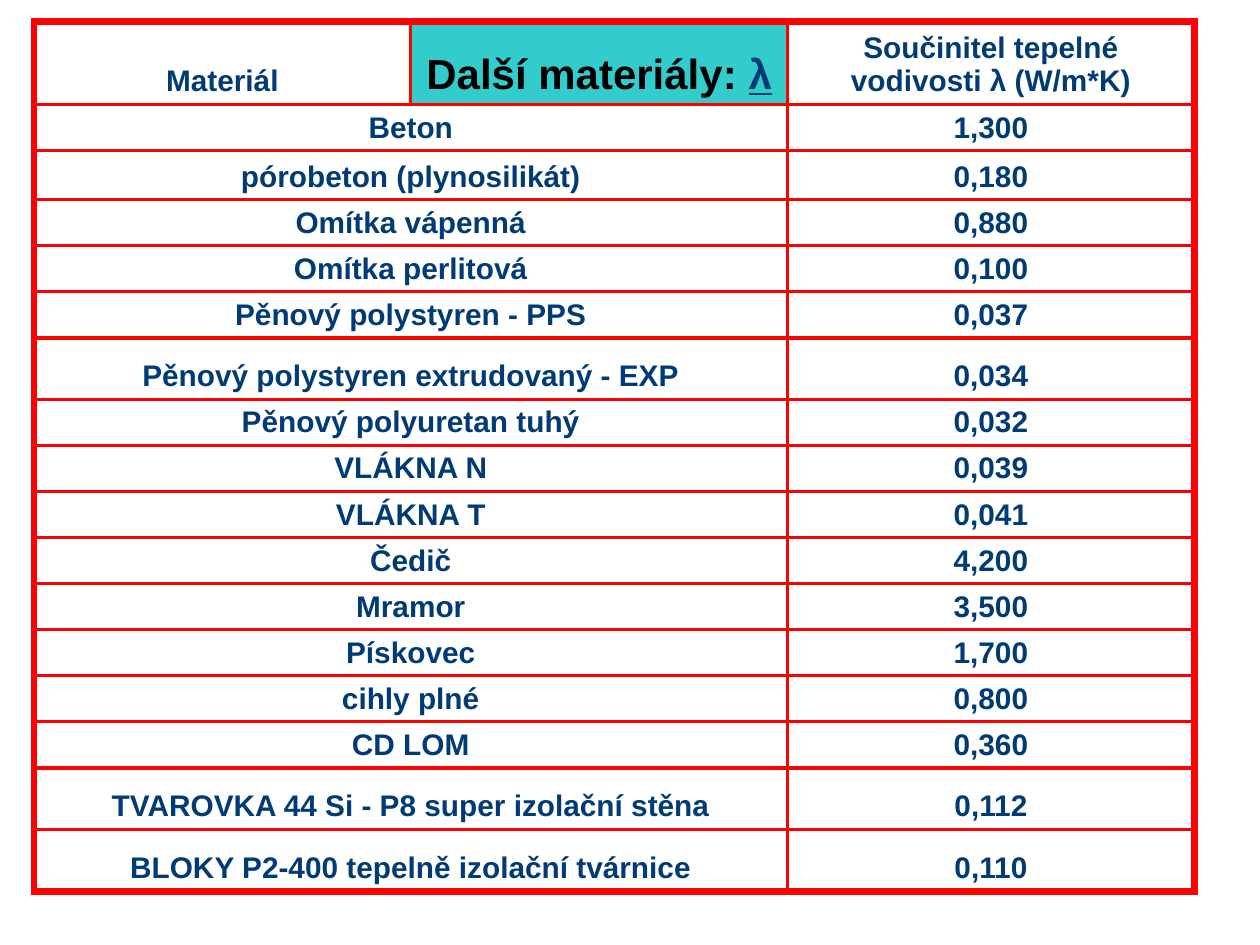
from dataclasses import dataclass

from lxml.etree import SubElement
from pptx import Presentation
from pptx.dml.color import RGBColor
from pptx.enum.text import MSO_ANCHOR, PP_ALIGN
from pptx.oxml.ns import qn
from pptx.util import Inches, Pt

HEADER = [
    [("Materiál", "body")],
    [("Další materiály: ", "title"), ("λ", "symbol")],
    [("Součinitel tepelné vodivosti λ (W/m*K)", "body")],
]
MATERIALS = [
    ("Beton", "1,300"),
    ("pórobeton (plynosilikát)", "0,180"),
    ("Omítka vápenná", "0,880"),
    ("Omítka perlitová", "0,100"),
    ("Pěnový polystyren - PPS", "0,037"),
    ("Pěnový polystyren extrudovaný - EXP", "0,034"),
    ("Pěnový polyuretan tuhý", "0,032"),
    ("VLÁKNA N", "0,039"),
    ("VLÁKNA T", "0,041"),
    ("Čedič", "4,200"),
    ("Mramor", "3,500"),
    ("Pískovec", "1,700"),
    ("cihly plné", "0,800"),
    ("CD LOM", "0,360"),
    ("TVAROVKA 44 Si - P8 super izolační stěna", "0,112"),
    ("BLOKY P2-400 tepelně izolační tvárnice", "0,110"),
]
COLUMNS = [2.99, 2.99, 3.23]
ROW = 0.31
SPECIAL_ROWS = {0: 0.66, 2: 0.39, 6: 0.49, 15: 0.49, 16: 0.49}
FRAME = (0.27, 0.17, 9.21, 7.15)


@dataclass(frozen=True)
class Theme:
    font: str = "Arial"
    ink: str = "003B76"
    title: str = "000000"
    accent: str = "33CCCC"
    border: str = "FF0000"
    body_size: int = 17
    title_size: int = 24
    inner: float = 2.25
    outer: float = 4.5


theme = Theme()
STYLES = {
    "body": (theme.body_size, theme.ink, False),
    "title": (theme.title_size, theme.title, False),
    "symbol": (theme.title_size, theme.ink, True),
}


def write(cell, runs):
    cell.vertical_anchor = MSO_ANCHOR.BOTTOM
    p = cell.text_frame.paragraphs[0]
    p.alignment = PP_ALIGN.CENTER
    for text, style in runs:
        size, color, underline = STYLES[style]
        r = p.add_run()
        r.text = text
        r.font.name = theme.font
        r.font.size = Pt(size)
        r.font.bold = True
        r.font.underline = underline
        r.font.color.rgb = RGBColor.from_string(color)


def add_borders(cell, outer_sides):
    tc_pr = cell._tc.get_or_add_tcPr()
    for i, side in enumerate("LRTB"):
        width = theme.outer if side in outer_sides else theme.inner
        ln = SubElement(tc_pr, qn(f"a:ln{side}"), w=str(Pt(width)))
        fill = SubElement(ln, qn("a:solidFill"))
        SubElement(fill, qn("a:srgbClr"), val=theme.border)
        tc_pr.insert(i, ln)


def main():
    prs = Presentation()
    prs.slide_width, prs.slide_height = Inches(10), Inches(7.5)
    s = prs.slides.add_slide(prs.slide_layouts[6])
    rows, cols = len(MATERIALS) + 1, len(COLUMNS)
    frame = s.shapes.add_table(rows, cols, *map(Inches, FRAME))
    table = frame.table
    table.first_row = table.horz_banding = False
    for column, width in zip(table.columns, COLUMNS):
        column.width = Inches(width)
    for i, row in enumerate(table.rows):
        row.height = Inches(SPECIAL_ROWS.get(i, ROW))
    frame.height = Inches(FRAME[3])

    for i in range(rows):
        for j in range(cols):
            cell = table.cell(i, j)
            cell.fill.background()
            edges = {"L": j == 0, "R": j == cols - 1, "T": i == 0, "B": i == rows - 1}
            add_borders(cell, [side for side, outer in edges.items() if outer])

    for j, runs in enumerate(HEADER):
        write(table.cell(0, j), runs)
    accent = table.cell(0, 1).fill
    accent.solid()
    accent.fore_color.rgb = RGBColor.from_string(theme.accent)

    for i, (material, value) in enumerate(MATERIALS, 1):
        table.cell(i, 0).merge(table.cell(i, 1))
        write(table.cell(i, 0), [(material, "body")])
        write(table.cell(i, 2), [(value, "body")])

    prs.save("out.pptx")


if __name__ == "__main__":
    main()
